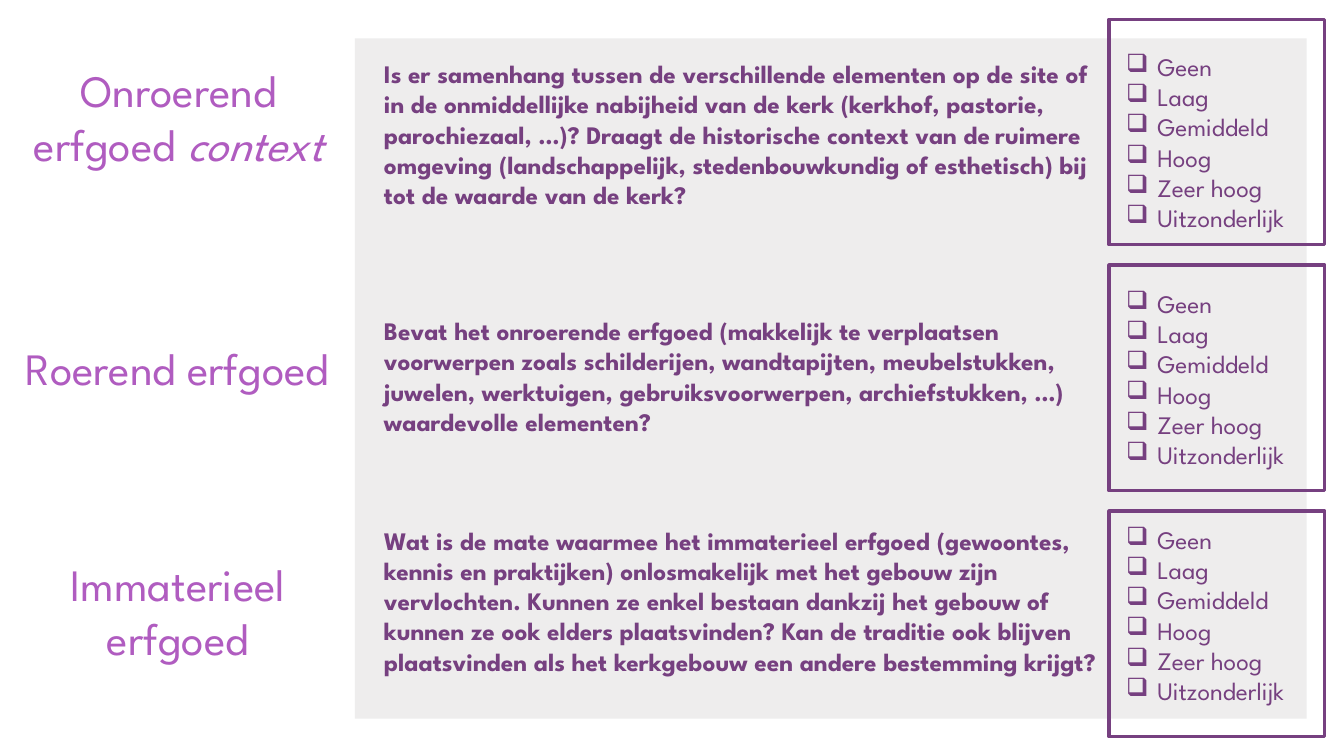
from pptx import Presentation
from pptx.dml.color import RGBColor
from pptx.enum.shapes import MSO_SHAPE
from pptx.enum.text import MSO_ANCHOR, PP_ALIGN
from pptx.oxml.ns import qn
from pptx.util import Inches, Pt
from lxml import etree

COLORS = {"panel": "EEEDED", "purple": "764080", "title": "B05CC0", "black": "000000"}
TITLE = {"size": Pt(32), "name": "League Spartan"}
QUESTION = {"size": Pt(18), "name": "League Spartan", "bold": True}
OPTION = {"size": Pt(18), "name": "League Spartan"}
LEVELS = ["Geen", "Laag", "Gemiddeld", "Hoog", "Zeer hoog", "Uitzonderlijk"]

ROWS = [
    {
        "title": [[("Onroerend erfgoed ", {}), ("context", {"italic": True})]],
        "title_box": (0.01, 0.56, 3.52, 1.2),
        "question": [
            ("Is er samenhang tussen de verschillende elementen op de site of in de "
             "onmiddellijke nabijheid van de kerk (kerkhof, pastorie, parochiezaal, …)? "
             "Draagt de historische context van de", {}),
            (" ", {"size": Pt(12), "color": "black"}),
            ("ruimere omgeving (landschappelijk, stedenbouwkundig of esthetisch) bij "
             "tot de waarde van de kerk?", {}),
        ],
        "question_box": (3.71, 0.53, 7.29, 1.92),
        "options_box": (11.07, 0.46, 2.06, 1.92),
    },
    {
        "title": [[("Roerend erfgoed", {})]],
        "title_box": (0.09, 3.24, 3.34, 0.82),
        "question": [
            ("Bevat het onroerende erfgoed (makkelijk te verplaatsen voorwerpen zoals "
             "schilderijen, wandtapijten, meubelstukken, juwelen, werktuigen, "
             "gebruiksvoorwerpen, archiefstukken, …) waardevolle elementen?", {}),
        ],
        "question_box": (3.71, 3.08, 7.29, 1.97),
        "options_box": (11.07, 2.81, 2.06, 1.92),
    },
    {
        "title": [[("Immaterieel", {})], [("erfgoed", {})]],
        "title_box": (0.25, 5.46, 3.03, 1.2),
        "question": [
            ("Wat is de mate waarmee het immaterieel erfgoed (gewoontes, kennis en "
             "praktijken) onlosmakelijk met het gebouw zijn vervlochten. Kunnen ze enkel "
             "bestaan dankzij het gebouw of kunnen ze ook elders plaatsvinden? Kan de "
             "traditie ook blijven plaatsvinden als het kerkgebouw een andere bestemming "
             "krijgt?", {}),
        ],
        "question_box": (3.71, 5.16, 7.29, 1.65),
        "options_box": (11.07, 5.15, 2.06, 1.92),
    },
]


def add_rect(box):
    sp = s.shapes.add_shape(MSO_SHAPE.RECTANGLE, *map(Inches, box))
    sp.shadow.inherit = False
    return sp


def add_text(box, paragraphs, font, color):
    tf = s.shapes.add_textbox(*map(Inches, box)).text_frame
    tf.word_wrap = True
    for i, runs in enumerate(paragraphs):
        p = tf.add_paragraph() if i else tf.paragraphs[0]
        for text, changes in runs:
            r = p.add_run()
            r.text = text
            for name, value in {**font, "color": color, **changes}.items():
                if name == "color":
                    r.font.color.rgb = RGBColor.from_string(COLORS[value])
                else:
                    setattr(r.font, name, value)
    return tf


prs = Presentation()
prs.slide_width = Inches(13.33)
prs.slide_height = Inches(7.5)
s = prs.slides.add_slide(prs.slide_layouts[6])

panel = add_rect((3.52, 0.38, 9.44, 6.75))
panel.fill.solid()
panel.fill.fore_color.rgb = RGBColor.from_string(COLORS["panel"])
panel.line.fill.background()

for i, row in enumerate(ROWS):
    frame = add_rect((11, 0.19 + 2.44 * i, 2.14, 2.24))
    frame.fill.background()
    frame.line.color.rgb = RGBColor.from_string(COLORS["purple"])
    frame.line.width = Pt(2.25)

    tf = add_text(row["title_box"], row["title"], TITLE, "title")
    tf.vertical_anchor = MSO_ANCHOR.MIDDLE
    for p in tf.paragraphs:
        p.alignment = PP_ALIGN.CENTER

    add_text(row["question_box"], [row["question"]], QUESTION, "purple")

    levels = [[(level, {})] for level in LEVELS]
    tf = add_text(row["options_box"], levels, OPTION, "purple")
    for p in tf.paragraphs:
        pPr = p._p.get_or_add_pPr()
        pPr.set("marL", str(Inches(0.31)))
        pPr.set("indent", str(-Inches(0.31)))
        etree.SubElement(pPr, qn("a:buChar")).set("char", "❑")

prs.save("out.pptx")
